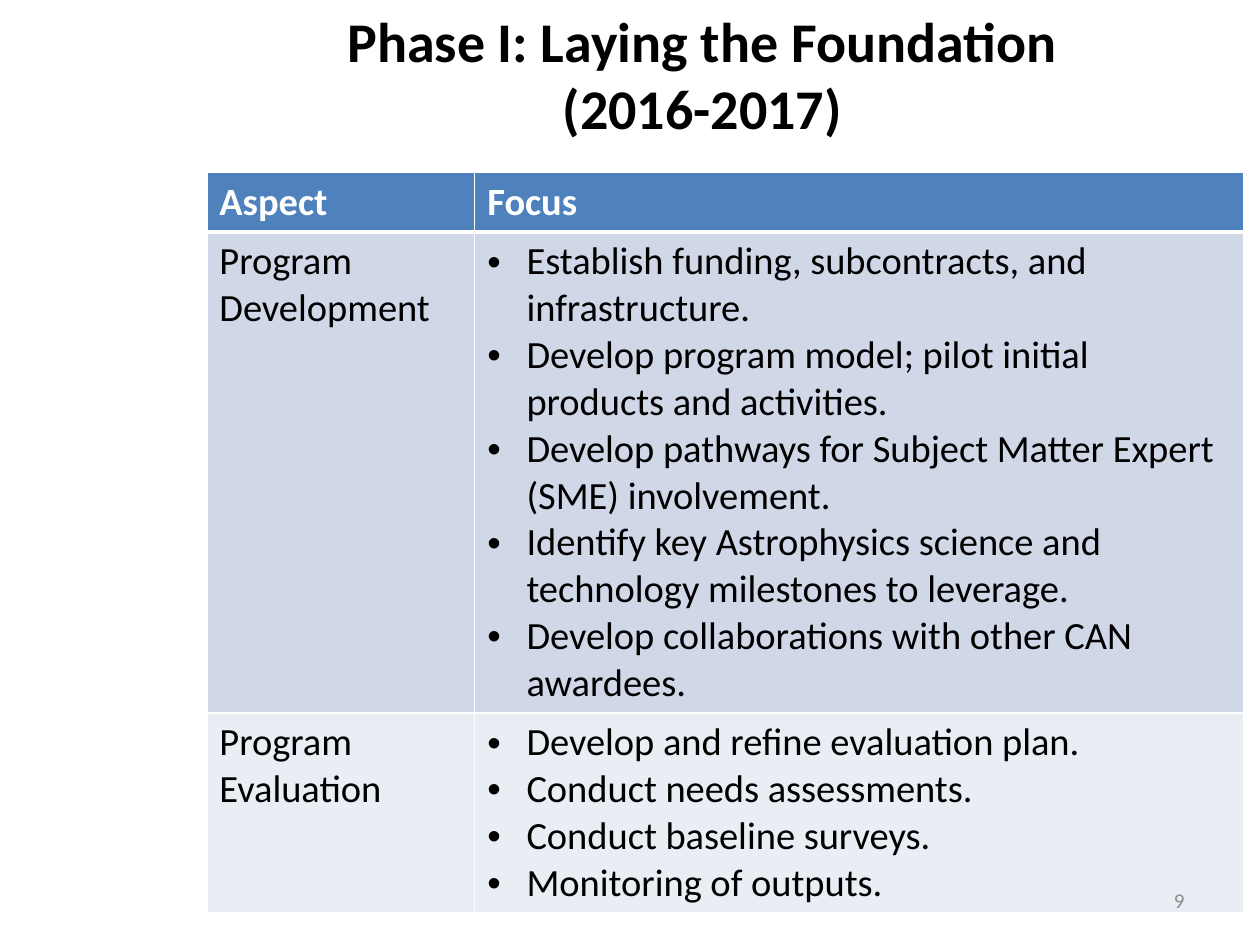
import pptx
import pptx.util
import pptx.dml.color
import pptx.enum.text
import pptx.oxml
import pptx.oxml.ns

Cm = pptx.util.Cm
Pt = pptx.util.Pt
ALIGN = pptx.enum.text.PP_ALIGN
MIDDLE = pptx.enum.text.MSO_ANCHOR.MIDDLE

HEAD = ["Aspect", "Focus"]
BODY = [
    ("Program Development", [
        "Establish funding, subcontracts, and infrastructure.",
        "Develop program model; pilot initial products and activities.",
        "Develop pathways for Subject Matter Expert (SME) involvement.",
        "Identify key Astrophysics science and technology milestones to leverage.",
        "Develop collaborations with other CAN awardees.",
    ]),
    ("Program Evaluation", [
        "Develop and refine evaluation plan.",
        "Conduct needs assessments.",
        "Conduct baseline surveys.",
        "Monitoring of outputs.",
    ]),
]
WIDTHS = [5.4, 15.5]
HEIGHTS = [1.19, 9.69, 4.01]
BANDS = ["D0D8E8", "E9EDF4"]


def color(code):
    return pptx.dml.color.RGBColor.from_string(code)


def add_run(par, text, size, tint="000000", bold=False):
    run = par.add_run()
    run.text = text
    font = run.font
    font.name = "Calibri"
    font.size = Pt(size)
    font.bold = bold
    font.color.rgb = color(tint)


def place(shape, left, top, width, height):
    shape.left, shape.top = Cm(left), Cm(top)
    shape.width, shape.height = Cm(width), Cm(height)


def add_title(slide, lines):
    title = slide.shapes.title
    place(title, 4.19, -0.1, 19.94, 3.18)
    frame = title.text_frame
    frame.vertical_anchor = MIDDLE
    par = frame.paragraphs[0]
    par.alignment = ALIGN.CENTER
    for i, line in enumerate(lines):
        if i:
            par.add_line_break()
        add_run(par, line, 32, bold=True)


def set_bullet(par):
    props = par._p.get_or_add_pPr()
    props.set("marL", str(Cm(0.79)))
    props.set("indent", str(Cm(-0.79)))
    space = pptx.oxml.ns.nsdecls("a")
    for part in ('buFont %s typeface="Arial"', 'buChar %s char="•"'):
        props.append(pptx.oxml.parse_xml(f"<a:{part % space}/>"))


def set_edges(cell, top, bottom):
    props = cell._tc.get_or_add_tcPr()
    space = pptx.oxml.ns.nsdecls("a")
    edges = [("L", 1), ("R", 1), ("T", top), ("B", bottom)]
    for i, (side, width) in enumerate(edges):
        props.insert(i, pptx.oxml.parse_xml(
            f'<a:ln{side} {space} w="{Pt(width)}"><a:solidFill>'
            f'<a:srgbClr val="FFFFFF"/></a:solidFill></a:ln{side}>'))


def fill_cell(cell, lines, back, tint="000000", bold=False, bullet=False):
    cell.fill.solid()
    cell.fill.fore_color.rgb = color(back)
    frame = cell.text_frame
    for i, line in enumerate(lines):
        par = frame.add_paragraph() if i else frame.paragraphs[0]
        if bullet:
            set_bullet(par)
        add_run(par, line, 22, tint, bold)


def add_grid(slide):
    table = slide.shapes.add_table(
        len(HEIGHTS), len(WIDTHS), Cm(4.17), Cm(3.48),
        Cm(sum(WIDTHS)), Cm(sum(HEIGHTS))).table
    for col, width in zip(table.columns, WIDTHS):
        col.width = Cm(width)
    for row, height in zip(table.rows, HEIGHTS):
        row.height = Cm(height)

    # Header row
    for c, label in enumerate(HEAD):
        fill_cell(table.cell(0, c), [label], "4F81BD", "FFFFFF", bold=True)
        set_edges(table.cell(0, c), 1, 3)

    # Body rows
    for r, ((aspect, focus), band) in enumerate(zip(BODY, BANDS), 1):
        fill_cell(table.cell(r, 0), [aspect], band)
        fill_cell(table.cell(r, 1), focus, band, bullet=True)
        for c in range(len(WIDTHS)):
            set_edges(table.cell(r, c), 3 if r == 1 else 1, 1)


def add_number(slide, text):
    box = slide.shapes.add_textbox(Cm(18.2), Cm(17.65), Cm(5.93), Cm(1.01))
    frame = box.text_frame
    frame.word_wrap = True
    frame.vertical_anchor = MIDDLE
    par = frame.paragraphs[0]
    par.alignment = ALIGN.RIGHT
    add_run(par, text, 12, "8C8C8C")


def main():
    deck = pptx.Presentation()
    deck.slide_width, deck.slide_height = Cm(25.4), Cm(19.05)
    slide = deck.slides.add_slide(deck.slide_layouts[5])
    add_title(slide, ["Phase I: Laying the Foundation", "(2016-2017)"])
    add_grid(slide)
    add_number(slide, "9")
    deck.save("out.pptx")


if __name__ == "__main__":
    main()
